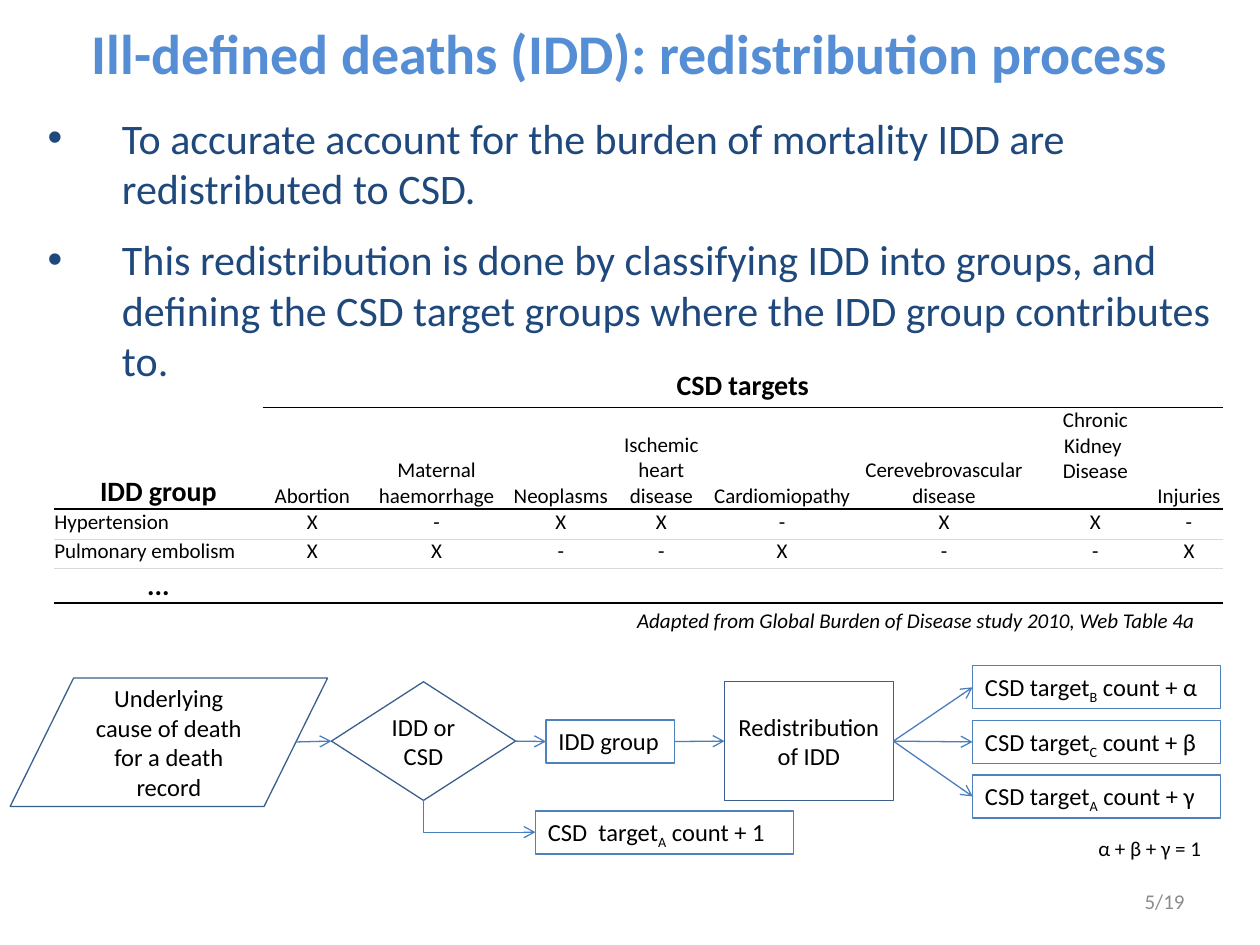
from lxml.etree import SubElement
from pptx import Presentation
from pptx.dml.color import RGBColor
from pptx.enum.shapes import MSO_CONNECTOR as Connector, MSO_SHAPE as Shape
from pptx.enum.text import MSO_ANCHOR as Anchor, MSO_AUTO_SIZE as AutoSize, PP_ALIGN as Align
from pptx.oxml.ns import qn
from pptx.util import Pt

FONT = "Calibri"
BLACK, NAVY, TITLE_BLUE = "000000", "1F497D", "558ED5"
NODE_LINE, BOX_LINE, ARROW_LINE = "3A5F8C", "4F81BD", "4B7EBC"
GREY, RULE_GREY = "8C8C8C", "D9D9D9"
NO_STYLE_NO_GRID = "{2D5ABB26-0587-4C30-8999-92F81FD0307C}"

BULLETS = [
    "To accurate account for the burden of mortality IDD are redistributed to CSD.",
    "This redistribution is done by classifying IDD into groups, and defining the "
    "CSD target groups where the IDD group contributes to.",
]
TABLE_ROWS = [
    ["", "CSD targets"] + [""] * 7,
    ["IDD group", "Abortion", "Maternal haemorrhage", "Neoplasms", "Ischemic heart disease",
     "Cardiomiopathy", "Cerevebrovascular disease", "Chronic Kidney \nDisease", "Injuries"],
    ["Hypertension", *"X-XX-XX-"],
    ["Pulmonary embolism", *"XX--X--X"],
    ["..."] + [""] * 8,
]
COLUMN_WIDTHS = [119, 57, 85, 57, 58, 80, 105, 68, 39]
ROW_HEIGHTS = [22.5, 58, 17, 17, 19.5]
ROW_RULES = [(BLACK, 1), (BLACK, 1), (RULE_GREY, 0.25), (RULE_GREY, 0.25), (BLACK, 1)]
LARGE_CELLS = {"CSD targets", "IDD group", "..."}


def rgb(color):
    return RGBColor.from_string(color)


def format_text(text_frame, size, color=BLACK, align=Align.LEFT, bold=False, italic=False):
    for paragraph in text_frame.paragraphs:
        paragraph.alignment = align
        for run in paragraph.runs:
            font = run.font
            font.name, font.size = FONT, Pt(size)
            font.bold, font.italic = bold, italic
            font.color.rgb = rgb(color)


def place(shape, left, top, width, height):
    shape.left, shape.top = Pt(left), Pt(top)
    shape.width, shape.height = Pt(width), Pt(height)


def fill_title(title):
    place(title, 17, 6.5, 686, 46)
    title.text_frame.text = "Ill-defined deaths (IDD): redistribution process"
    title.text_frame.auto_size = AutoSize.NONE
    format_text(title.text_frame, 32, TITLE_BLUE, Align.CENTER, bold=True)


def fill_body(body):
    place(body, 20, 60.5, 680.5, 343)
    text_frame = body.text_frame
    text_frame.text = "\n".join(BULLETS)
    text_frame.auto_size = AutoSize.NONE
    format_text(text_frame, 24, NAVY)
    for paragraph in text_frame.paragraphs:
        paragraph.space_before, paragraph.space_after = Pt(0), Pt(12)
        properties = paragraph._p.get_or_add_pPr()
        properties.set("marL", str(Pt(42.5)))
        properties.set("indent", str(-Pt(42.5)))


def add_text(slide, text, left, top, width, height, **style):
    text_box = slide.shapes.add_textbox(Pt(left), Pt(top), Pt(width), Pt(height))
    text_box.text_frame.word_wrap = True
    text_box.text_frame.text = text
    format_text(text_box.text_frame, 12, **style)
    return text_box


def add_cell_rule(cell, side, color, width):
    line = SubElement(cell._tc.get_or_add_tcPr(), qn(f"a:{side}"), w=str(Pt(width)))
    SubElement(SubElement(line, qn("a:solidFill")), qn("a:srgbClr"), val=color)


def fill_cell(cell, text, row, column):
    cell.margin_left = cell.margin_right = cell.margin_top = cell.margin_bottom = 0
    cell.vertical_anchor = Anchor.BOTTOM if row == 1 and "\n" not in text else Anchor.TOP
    cell.text_frame.text = text
    large = text in LARGE_CELLS
    align = Align.CENTER if column or large else Align.LEFT
    format_text(cell.text_frame, 16 if large else 12, align=align, bold=large)
    if not text:
        SubElement(cell.text_frame.paragraphs[0]._p, qn("a:endParaRPr"), sz="1200")
    if row > 1 or (row == 1 and column):
        add_cell_rule(cell, "lnT", *ROW_RULES[row - 1])
    if row or column:
        add_cell_rule(cell, "lnB", *ROW_RULES[row])
    cell.fill.background()


def add_targets_table(slide):
    frame = slide.shapes.add_table(len(TABLE_ROWS), len(COLUMN_WIDTHS), Pt(31), Pt(210.5),
                                   Pt(sum(COLUMN_WIDTHS)), Pt(sum(ROW_HEIGHTS)))
    table = frame.table
    table.first_row = table.horz_banding = False
    table._tbl.tblPr.find(qn("a:tableStyleId")).text = NO_STYLE_NO_GRID
    for column, width in zip(table.columns, COLUMN_WIDTHS):
        column.width = Pt(width)
    for row, height in zip(table.rows, ROW_HEIGHTS):
        row.height = Pt(height)
    for row, texts in enumerate(TABLE_ROWS):
        for column, text in enumerate(texts):
            fill_cell(table.cell(row, column), text, row, column)
    table.cell(0, 1).merge(table.cell(0, len(COLUMN_WIDTHS) - 1))


def add_outline(slide, kind, left, top, width, height, color):
    shape = slide.shapes.add_shape(kind, Pt(left), Pt(top), Pt(width), Pt(height))
    shape.shadow.inherit = False
    shape.fill.background()
    shape.line.color.rgb = rgb(color)
    shape.line.width = Pt(0.75)
    shape.text_frame.word_wrap = True
    return shape


def add_node(slide, kind, text, left, top, width, height):
    node = add_outline(slide, kind, left, top, width, height, NODE_LINE)
    node.text_frame.text = text
    node.text_frame.vertical_anchor = Anchor.MIDDLE
    format_text(node.text_frame, 14, align=Align.CENTER)
    return node


def add_box(slide, left, top, width, text, subscript="", ending=""):
    """Add a one-line box whose text may hold a subscript letter."""
    box = add_outline(slide, Shape.RECTANGLE, left, top, width, 24.5, BOX_LINE)
    box.text_frame.vertical_anchor = Anchor.TOP
    paragraph = box.text_frame.paragraphs[0]
    for part in filter(None, (text, subscript, ending)):
        paragraph.add_run().text = part
    format_text(box.text_frame, 14)
    if subscript:
        paragraph.runs[1].font._element.set("baseline", "-25000")
    return box


def add_arrow(slide, begin_x, begin_y, end_x, end_y, kind=Connector.STRAIGHT):
    arrow = slide.shapes.add_connector(kind, Pt(begin_x), Pt(begin_y), Pt(end_x), Pt(end_y))
    arrow.line.color.rgb = rgb(ARROW_LINE)
    arrow.line.width = Pt(0.75)
    SubElement(arrow.line._get_or_add_ln(), qn("a:tailEnd"), type="arrow")
    SubElement(arrow._element.spPr, qn("a:effectLst"))
    return arrow


def join(slide, source, target):
    """Draw an arrow from the right side of source to the left side of target."""
    arrow = add_arrow(slide, 0, 0, 0, 0)
    arrow.begin_connect(source, 3)
    arrow.end_connect(target, 1)


def add_corner_arrow(slide, begin_x, begin_y, end_x, end_y):
    """Draw an arrow that goes down and then right, as a turned and flipped corner."""
    center_x, center_y = (begin_x + end_x) / 2, (begin_y + end_y) / 2
    half_width, half_height = (end_y - begin_y) / 2, (end_x - begin_x) / 2
    arrow = add_arrow(slide, center_x + half_width, center_y - half_height,
                      center_x - half_width, center_y + half_height, Connector.ELBOW)
    properties = arrow._element.spPr
    properties.find(qn("a:xfrm")).set("rot", "16200000")
    properties.find(qn("a:prstGeom")).set("prst", "bentConnector2")


def add_flowchart(slide):
    add_node(slide, Shape.FLOWCHART_DATA, "Underlying cause of death for a death record",
             5.8, 387.4, 181.4, 73.4)
    decision = add_node(slide, Shape.FLOWCHART_DECISION, "IDD or CSD", 189.4, 389.6, 105.2, 67.8)
    group = add_box(slide, 312, 411.5, 73.4, "IDD group")
    process = add_node(slide, Shape.FLOWCHART_PROCESS, "Redistribution of IDD",
                       414, 389.6, 96.5, 67.8)
    add_box(slide, 306, 463.5, 147.6, "CSD  target", "A", " count + 1")
    add_arrow(slide, 169.2, 424, 189.4, 423.5)
    add_corner_arrow(slide, 242, 457.4, 306, 475.5)
    join(slide, decision, group)
    join(slide, group, process)
    for index, (letter, share) in enumerate(zip("BCA", "αβγ")):
        target = add_box(slide, 555.8, 380.5 + 31.2 * index, 141.8,
                         "CSD target", letter, f" count + {share}")
        join(slide, process, target)


def main():
    presentation = Presentation()
    presentation.slide_width, presentation.slide_height = Pt(720), Pt(540)
    slide = presentation.slides.add_slide(presentation.slide_layouts[1])
    fill_title(slide.shapes.title)
    fill_body(slide.placeholders[1])
    add_flowchart(slide)
    add_targets_table(slide)
    add_text(slide, "Adapted from Global Burden of Disease study 2010, Web Table 4a",
             357, 343.5, 338, 22, italic=True)
    number = add_text(slide, "5/19", 516, 500.5, 168, 28.8, color=GREY, align=Align.RIGHT)
    number.text_frame.vertical_anchor = Anchor.MIDDLE
    add_text(slide, "α + β + γ = 1", 620.5, 474, 79, 22)
    presentation.save("out.pptx")


if __name__ == "__main__":
    main()
